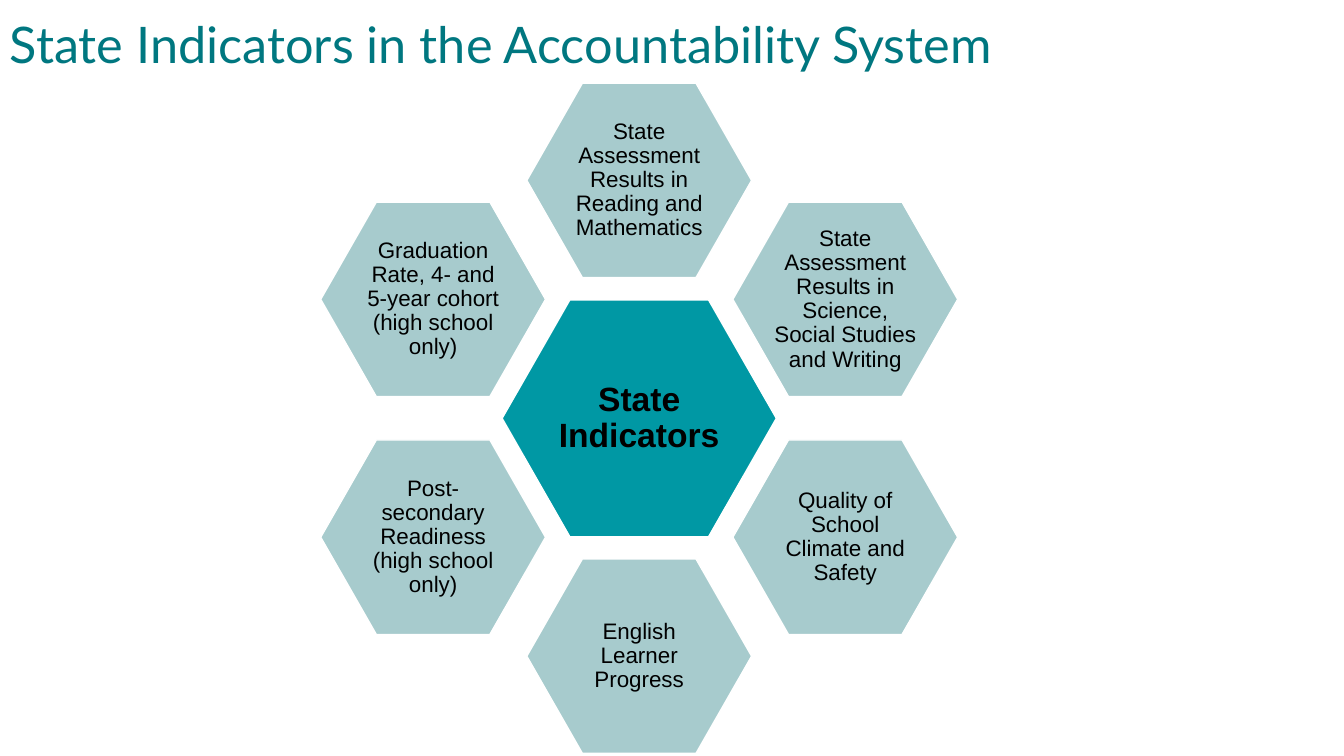
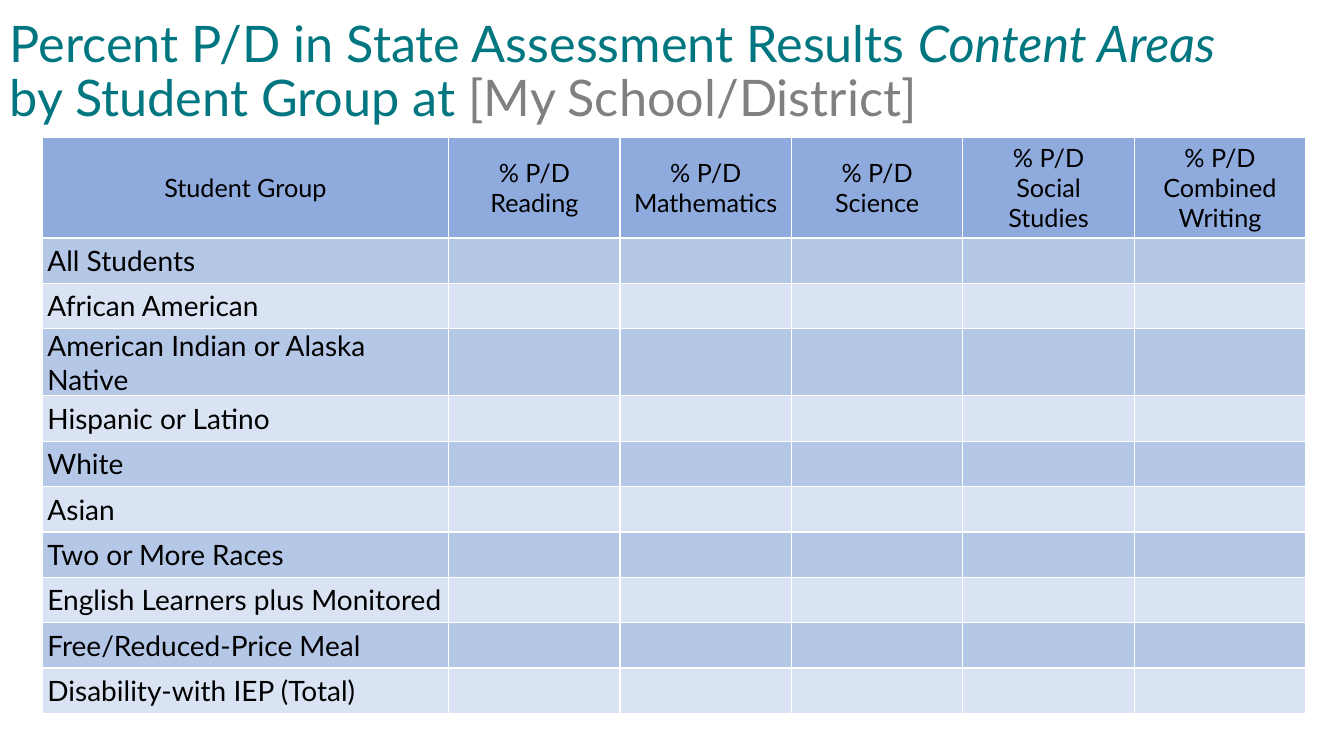
from dataclasses import dataclass
from math import cos, radians, sin

from lxml import etree
from pptx import Presentation
from pptx.dml.color import RGBColor
from pptx.enum import shapes, text
from pptx.oxml import ns
from pptx.util import Inches, Pt

# Shared style
TEAL_TEXT = RGBColor(0x00, 0x77, 0x80)
TEAL = RGBColor(0x00, 0x98, 0xA4)
PALE_TEAL = RGBColor(0xA7, 0xCB, 0xCD)
GRAY = RGBColor(0x80, 0x80, 0x80)
BLACK = RGBColor(0x00, 0x00, 0x00)
WHITE = RGBColor(0xFF, 0xFF, 0xFF)
HEADER_BLUE = RGBColor(0x8F, 0xAA, 0xDC)
BAND_BLUES = (RGBColor(0xB4, 0xC7, 0xE7), RGBColor(0xDA, 0xE3, 0xF3))
TITLE_FONT, DIAGRAM_FONT = "Lato", "Arial"


@dataclass
class TitleRun:
    text: str
    color: RGBColor = TEAL_TEXT
    italic: bool = False


@dataclass
class Hexagon:
    label: str
    center_x: float
    center_y: float
    width: float = 2.23
    height: float = 1.93
    fill: RGBColor = PALE_TEAL
    size: int = 16
    bold: bool = False
    inset: float = 0.02


def set_font(font, name: str, size: int, color: RGBColor = BLACK,
             bold: bool = False, italic: bool = False) -> None:
    font.name, font.size = name, Pt(size)
    font.bold, font.italic = bold, italic
    font.color.rgb = color


def set_margins(target, horizontal: float, vertical: float) -> None:
    target.margin_left = target.margin_right = Inches(horizontal)
    target.margin_top = target.margin_bottom = Inches(vertical)


def add_title(slide, runs: list[TitleRun], top: float, width: float, height: float) -> None:
    box = slide.shapes.add_textbox(0, Inches(top), Inches(width), Inches(height))
    frame = box.text_frame
    frame.word_wrap = True
    frame.vertical_anchor = text.MSO_ANCHOR.MIDDLE
    paragraph = frame.paragraphs[0]
    paragraph.line_spacing = 0.9
    for title_run in runs:
        run = paragraph.add_run()
        run.text = title_run.text
        set_font(run.font, TITLE_FONT, 36, title_run.color, italic=title_run.italic)


def add_hexagon(slide, hexagon: Hexagon) -> None:
    shape = slide.shapes.add_shape(
        shapes.MSO_SHAPE.HEXAGON,
        Inches(hexagon.center_x - hexagon.width / 2),
        Inches(hexagon.center_y - hexagon.height / 2),
        Inches(hexagon.width), Inches(hexagon.height))
    shape.adjustments[0] = 0.286
    shape.shadow.inherit = False
    shape.fill.solid()
    shape.fill.fore_color.rgb = hexagon.fill
    shape.line.color.rgb = WHITE
    shape.line.width = Pt(1)
    frame = shape.text_frame
    frame.word_wrap = True
    frame.vertical_anchor = text.MSO_ANCHOR.MIDDLE
    set_margins(frame, hexagon.inset, hexagon.inset)
    frame.text = hexagon.label
    paragraph = frame.paragraphs[0]
    paragraph.alignment = text.PP_ALIGN.CENTER
    paragraph.line_spacing = 0.9
    set_font(paragraph.runs[0].font, DIAGRAM_FONT, hexagon.size, bold=hexagon.bold)


def set_cell_borders(cell, color: RGBColor, width: float) -> None:
    properties = cell._tc.get_or_add_tcPr()
    for side in ("a:lnL", "a:lnR", "a:lnT", "a:lnB"):
        line = etree.SubElement(properties, ns.qn(side), w=str(Pt(width)))
        fill = etree.SubElement(line, ns.qn("a:solidFill"))
        etree.SubElement(fill, ns.qn("a:srgbClr"), val=str(color))


def style_cell(cell, fill: RGBColor, size: int, alignment) -> None:
    set_cell_borders(cell, WHITE, 1)
    cell.fill.solid()
    cell.fill.fore_color.rgb = fill
    cell.vertical_anchor = text.MSO_ANCHOR.MIDDLE
    for paragraph in cell.text_frame.paragraphs:
        paragraph.alignment = alignment
        for run in paragraph.runs:
            set_font(run.font, TITLE_FONT, size)


# Slide 1: ring of indicators around the hub
INDICATORS = [
    "State Assessment Results in Reading and Mathematics",
    "State Assessment Results in Science, Social Studies and Writing",
    "Quality of School Climate and Safety",
    "English Learner Progress",
    "Post- secondary Readiness (high school only)",
    "Graduation Rate, 4- and 5-year cohort (high school only)",
]
HUB_X, HUB_Y, RING_RADIUS = 6.34, 4.15, 2.36


def build_indicators(slide) -> None:
    add_title(slide, [TitleRun("State Indicators in the Accountability System")],
              0.04, 13.33, 0.85)
    add_hexagon(slide, Hexagon("State Indicators", HUB_X, HUB_Y, 2.72, 2.35,
                               TEAL, 24, True, 0.03))
    for index, label in enumerate(INDICATORS):
        angle = radians(index * 360 / len(INDICATORS))
        add_hexagon(slide, Hexagon(label, HUB_X + RING_RADIUS * sin(angle),
                                   HUB_Y - RING_RADIUS * cos(angle)))


# Slide 2: results table by student group
HEADERS = ["Student Group", "% P/D\nReading", "% P/D Mathematics", "% P/D\nScience",
           "% P/D\vSocial\vStudies", "% P/D Combined Writing"]
STUDENT_GROUPS = [
    "All Students", "African American", "American Indian or Alaska Native",
    "Hispanic or Latino", "White", "Asian", "Two or More Races",
    "English Learners plus Monitored", "Free/Reduced-Price Meal",
    "Disability-with IEP (Total)",
]
COLUMN_WIDTHS = [4.03] + [1.7] * 5
ROW_HEIGHTS = [0.97, 0.45, 0.45, 0.58] + [0.45] * 7


def build_results(slide) -> None:
    add_title(slide, [
        TitleRun("Percent P/D in State Assessment Results "),
        TitleRun("Content Areas ", italic=True),
        TitleRun("by Student Group at "),
        TitleRun("[My School/District]", GRAY),
    ], 0, 12.42, 1.45)
    table = slide.shapes.add_table(
        len(ROW_HEIGHTS), len(COLUMN_WIDTHS), Inches(0.42), Inches(1.36),
        Inches(sum(COLUMN_WIDTHS)), Inches(sum(ROW_HEIGHTS))).table
    table.first_row = table.horz_banding = False
    for column, width in zip(table.columns, COLUMN_WIDTHS):
        column.width = Inches(width)
    for row, height in zip(table.rows, ROW_HEIGHTS):
        row.height = Inches(height)

    # Header row
    for column_index, header in enumerate(HEADERS):
        cell = table.cell(0, column_index)
        cell.text_frame.text = header
        style_cell(cell, HEADER_BLUE, 18, text.PP_ALIGN.CENTER)

    # Banded body rows
    for row_index, group in enumerate(STUDENT_GROUPS):
        group_cell = table.cell(row_index + 1, 0)
        group_cell.text_frame.text = group
        set_margins(group_cell, 0.05, 0)
        for column_index in range(len(HEADERS)):
            style_cell(table.cell(row_index + 1, column_index),
                       BAND_BLUES[row_index % 2], 20, text.PP_ALIGN.LEFT)


def main() -> None:
    presentation = Presentation()
    presentation.slide_width = Inches(13.33)
    presentation.slide_height = Inches(7.5)
    blank_layout = presentation.slide_layouts[6]
    for build_slide in (build_indicators, build_results):
        build_slide(presentation.slides.add_slide(blank_layout))
    presentation.save("out.pptx")


if __name__ == "__main__":
    main()
